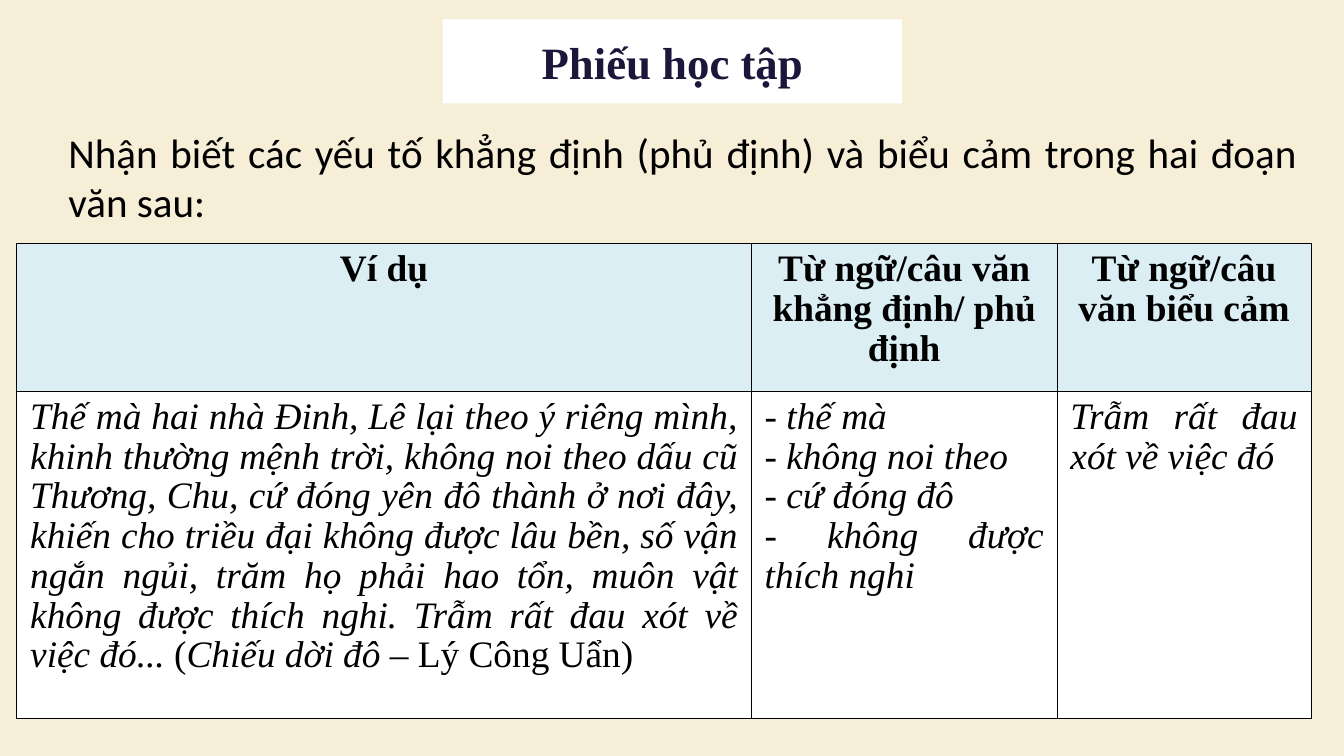
"""Builds a Vietnamese worksheet slide with a heading, a task and a table."""
from lxml import etree
from pptx import Presentation
from pptx.dml.color import RGBColor
from pptx.enum import text
from pptx.oxml import ns
from pptx.util import Inches, Pt

CREAM = RGBColor(0xF7, 0xEE, 0xD7)
WHITE = RGBColor(0xFF, 0xFF, 0xFF)
PALE_BLUE = RGBColor(0xDB, 0xEE, 0xF4)
NAVY = RGBColor(0x1D, 0x16, 0x3A)
BLACK = RGBColor(0, 0, 0)

CENTER = text.PP_ALIGN.CENTER
JUSTIFY = text.PP_ALIGN.JUSTIFY

HEADERS = ["Ví dụ", "Từ ngữ/câu văn khẳng định/ phủ định", "Từ ngữ/câu văn biểu cảm"]
EXCERPT = [
    ("Thế mà hai nhà Đinh, Lê lại theo ý riêng mình, khinh thường mệnh trời, "
     "không noi theo dấu cũ Thương, Chu, cứ đóng yên đô thành ở nơi đây, "
     "khiến cho triều đại không được lâu bền, số vận ngắn ngủi, trăm họ phải "
     "hao tổn, muôn vật không được thích nghi. Trẫm rất đau xót về việc đó... ", True),
    ("(", False),
    ("Chiếu dời đô", True),
    (" – Lý Công Uẩn)", False),
]
NEGATIONS = ["- thế mà", "- không noi theo", "- cứ đóng đô", "- không được thích nghi"]
EMOTIONS = ["Trẫm rất đau xót về việc đó"]


class Worksheet:
    """Holds the style and the current slide."""

    serif = "Times New Roman"
    sans = "Calibri"

    def __init__(self, prs):
        self.s = prs.slides.add_slide(prs.slide_layouts[5])
        self.fill(self.s.background, CREAM)

    def fill(self, target, color):
        target.fill.solid()
        target.fill.fore_color.rgb = color

    def style(self, p, name, size, color, align, bold=False):
        p.alignment = align
        p.font.name, p.font.size, p.font.bold = name, Pt(size), bold
        p.font.color.rgb = color

    def place(self, sp, left, top, width, height):
        sp.left, sp.top = Inches(left), Inches(top)
        sp.width, sp.height = Inches(width), Inches(height)

    def title(self, words, *box):
        sp = self.s.shapes.title
        self.place(sp, *box)
        self.fill(sp, WHITE)
        tf = sp.text_frame
        tf.text = words
        tf.auto_size = text.MSO_AUTO_SIZE.NONE
        tf.vertical_anchor = text.MSO_ANCHOR.MIDDLE
        tf.margin_left = tf.margin_right = tf.margin_top = tf.margin_bottom = Inches(0.2)
        self.style(tf.paragraphs[0], self.serif, 48, NAVY, CENTER, True)

    def task(self, words, *box):
        tf = self.s.shapes.add_textbox(*map(Inches, box)).text_frame
        tf.word_wrap = True
        tf.auto_size = text.MSO_AUTO_SIZE.SHAPE_TO_FIT_TEXT
        tf.text = words
        self.style(tf.paragraphs[0], self.sans, 44, BLACK, JUSTIFY)

    def table(self, left, top, widths, heights):
        frame = self.s.shapes.add_table(
            len(heights), len(widths), Inches(left), Inches(top),
            Inches(sum(widths)), Inches(sum(heights)))
        table = frame.table
        for column, width in zip(table.columns, widths):
            column.width = Inches(width)
        for row, height in zip(table.rows, heights):
            row.height = Inches(height)
        return table

    def border(self, cell):
        tcPr = cell._tc.get_or_add_tcPr()
        for side in ("lnL", "lnR", "lnT", "lnB"):
            ln = etree.SubElement(tcPr, ns.qn(f"a:{side}"), w=str(Pt(1)))
            solid = etree.SubElement(ln, ns.qn("a:solidFill"))
            etree.SubElement(solid, ns.qn("a:srgbClr"), val=str(BLACK))

    def cell(self, cell, paragraphs, color, align, bold=False):
        self.border(cell)
        self.fill(cell, color)
        cell.margin_left = cell.margin_right = Inches(0.2)
        cell.margin_top = cell.margin_bottom = Inches(0.1)
        tf = cell.text_frame
        for i, runs in enumerate(paragraphs):
            p = tf.add_paragraph() if i else tf.paragraphs[0]
            p.line_spacing = 0.96
            self.style(p, self.serif, 40, BLACK, align, bold)
            for words, italic in runs:
                r = p.add_run()
                r.text = words
                r.font.italic = italic


def main():
    prs = Presentation()
    prs.slide_width, prs.slide_height = Inches(20), Inches(11.25)
    sheet = Worksheet(prs)
    sheet.task("Nhận biết các yếu tố khẳng định (phủ định) và biểu cảm "
               "trong hai đoạn văn sau:", 0.92, 1.85, 18.5, 1.58)
    sheet.title("Phiếu học tập", 6.59, 0.29, 6.83, 1.25)

    table = sheet.table(0.25, 3.62, [10.93, 4.55, 3.78], [2.2, 4.87])
    for col, words in enumerate(HEADERS):
        sheet.cell(table.cell(0, col), [[(words, False)]], PALE_BLUE, CENTER, True)
    answers = [[[(line, True)] for line in lines] for lines in (NEGATIONS, EMOTIONS)]
    for col, paragraphs in enumerate([[EXCERPT], *answers]):
        sheet.cell(table.cell(1, col), paragraphs, WHITE, JUSTIFY)
    prs.save("out.pptx")


if __name__ == "__main__":
    main()
